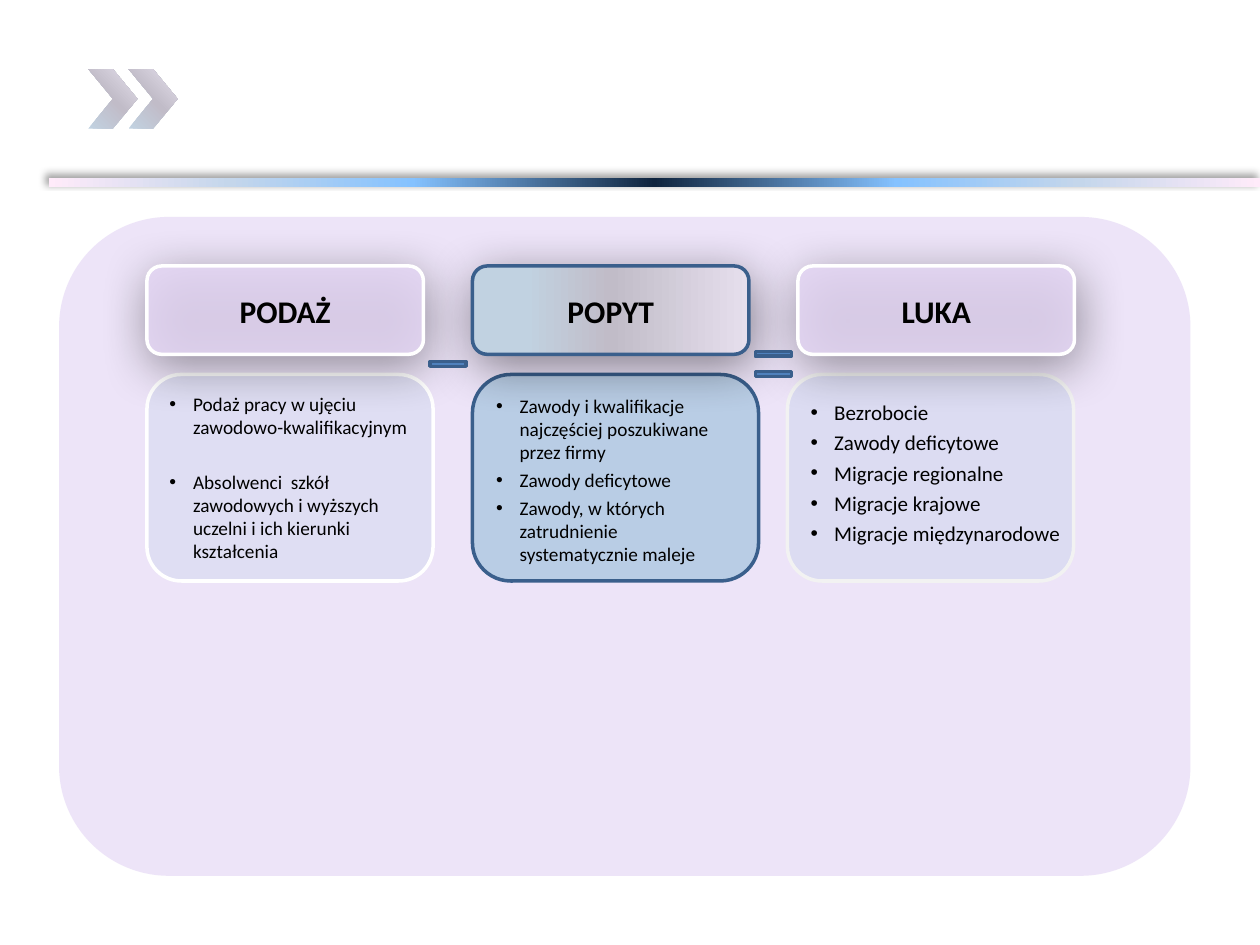
from lxml import etree
from pptx import Presentation
from pptx.dml.color import RGBColor
from pptx.enum import shapes, text
from pptx.oxml import ns
from pptx.util import Pt

COLORS = {
    "ink": "000000", "white": "FFFFFF", "pale": "F2F2F2",
    "lilac": "E5D7F5", "sky": "B9CDE5", "blue": "4F81BD", "edge": "3A5F8C",
    "navy": "0F243E", "azure": "85C2FF", "mist": "C4D6EB", "pink": "FFEBFA",
    "steel": "C1D2E1", "mauve": "C1BCC8", "haze": "E6DFED",
}
SHEEN = [(0, "steel"), (50, "mauve"), (100, "haze")]
BAR = [(0, "pink"), (15, "mist"), (30, "azure"), (50, "navy"),
       (70, "azure"), (85, "mist"), (100, "pink")]
GLOW = (43, 28, 6, 75)  # opacity %, blur, distance, direction
KIND = shapes.MSO_SHAPE


def child(parent, tag, **attributes):
    return etree.SubElement(parent, ns.qn(tag), {k: str(v) for k, v in attributes.items()})


class SlideBuilder:
    font = "Calibri"

    def __init__(self, slide):
        self.slide = slide

    def color(self, name):
        return RGBColor.from_string(COLORS[name])

    def shape(self, kind, box, fill, alpha=100, line=None, angle=0, shadow=None):
        """Draw a preset shape; fill is a colour name or a list of gradient stops."""
        item = self.slide.shapes.add_shape(kind, *map(Pt, box))
        item.shadow.inherit = False
        if isinstance(fill, list):
            self.gradient(item, fill, angle)
        else:
            item.fill.solid()
            item.fill.fore_color.rgb = self.color(fill)
            if alpha < 100:
                solid = item._element.spPr.find(ns.qn("a:solidFill"))
                child(solid[0], "a:alpha", val=alpha * 1000)
        if line:
            item.line.color.rgb = self.color(line)
            item.line.width = Pt(2)
        else:
            item.line.fill.background()
        if shadow:
            self.cast_shadow(item, *shadow)
        return item

    def gradient(self, item, stops, angle):
        item.fill.gradient()
        grad = item._element.spPr.find(ns.qn("a:gradFill"))
        for old in list(grad):
            grad.remove(old)
        stop_list = child(grad, "a:gsLst")
        for position, name in stops:
            stop = child(stop_list, "a:gs", pos=position * 1000)
            child(stop, "a:srgbClr", val=COLORS[name])
        child(grad, "a:lin", ang=angle * 60000, scaled=0)

    def cast_shadow(self, item, opacity, blur, distance, direction):
        effects = item._element.spPr.find(ns.qn("a:effectLst"))
        outer = child(effects, "a:outerShdw", blurRad=Pt(blur), dist=Pt(distance),
                      dir=direction * 60000, rotWithShape=0)
        child(child(outer, "a:srgbClr", val=COLORS["ink"]), "a:alpha", val=opacity * 1000)

    def style(self, paragraph, size, bold=False):
        paragraph.font.name = self.font
        paragraph.font.size = Pt(size)
        paragraph.font.bold = bold
        paragraph.font.color.rgb = self.color("ink")

    def bullets(self, frame, items, size, gap):
        frame.word_wrap = True
        for i, item in enumerate(items):
            paragraph = frame.paragraphs[0] if i == 0 else frame.add_paragraph()
            paragraph.text = item
            paragraph.alignment = text.PP_ALIGN.LEFT
            paragraph.space_before = Pt(gap if i else 0)
            props = paragraph._p.get_or_add_pPr()
            props.set("marL", str(Pt(13.5)))
            props.set("indent", str(Pt(-13.5)))
            child(props, "a:buFont", typeface="Arial")
            child(props, "a:buChar", char="•")
            self.style(paragraph, size)

    def heading(self, box, words):
        frame = self.slide.shapes.add_textbox(*map(Pt, box)).text_frame
        frame.word_wrap = True
        frame.auto_size = text.MSO_AUTO_SIZE.SHAPE_TO_FIT_TEXT
        paragraph = frame.paragraphs[0]
        paragraph.text = words
        paragraph.alignment = text.PP_ALIGN.CENTER
        self.style(paragraph, 18, bold=True)

    def body_list(self, box, items, size, gap):
        body = self.slide.placeholders[1]
        body.left, body.top, body.width, body.height = map(Pt, box)
        self.slide.shapes._spTree.append(body._element)  # bring to front
        body.text_frame.auto_size = text.MSO_AUTO_SIZE.NONE
        self.bullets(body.text_frame, items, size, gap)


def main():
    prs = Presentation()
    prs.slide_width, prs.slide_height = Pt(720), Pt(540)
    slide = prs.slides.add_slide(prs.slide_layouts[1])
    title = slide.shapes.title._element
    title.getparent().remove(title)
    build = SlideBuilder(slide)

    # Header band and chevrons
    build.shape(KIND.RECTANGLE, (28, 101.5, 692, 5.5), BAR, shadow=(40, 4, 3, 225))
    for left in (73.5, 50.5):
        build.shape(KIND.CHEVRON, (left, 39.5, 28, 34), SHEEN, angle=315)

    # Backdrop
    build.shape(KIND.ROUNDED_RECTANGLE, (33.75, 124, 646.5, 376.5), "lilac", alpha=66)

    # Column grid
    head_width, gap = 158, 28
    supply_x, demand_x, gap_x = (84 + i * (head_width + gap) for i in range(3))
    body_top, body_size = 214, (163.5, 118)

    # Column bodies
    supply = build.shape(KIND.ROUNDED_RECTANGLE, (supply_x, body_top, *body_size),
                         "sky", alpha=26, line="white")
    build.bullets(supply.text_frame, [
        "Podaż pracy w ujęciu zawodowo-kwalifikacyjnym",
        "Absolwenci  szkół zawodowych i wyższych uczelni i ich kierunki kształcenia",
    ], 11, 18)
    demand = build.shape(KIND.ROUNDED_RECTANGLE, (demand_x, body_top, *body_size),
                         "sky", line="edge")
    demand.adjustments[0] = 0.185
    demand.text_frame.margin_top = Pt(6)
    build.bullets(demand.text_frame, [
        "Zawody i kwalifikacje najczęściej poszukiwane przez firmy",
        "Zawody deficytowe",
        "Zawody, w których zatrudnienie systematycznie maleje",
    ], 11, 2.75)
    build.shape(KIND.ROUNDED_RECTANGLE, (gap_x - 6, body_top, *body_size),
                "sky", alpha=31, line="pale")

    # Column heads
    demand_sheen = [(19, "steel")] + SHEEN[1:]
    for left, fill, alpha, line in ((supply_x, "lilac", 84, "white"),
                                    (demand_x, demand_sheen, 100, "edge"),
                                    (gap_x, "lilac", 83, "white")):
        build.shape(KIND.ROUNDED_RECTANGLE, (left, 152, head_width, 50.5), fill,
                    alpha=alpha, line=line, shadow=GLOW)

    # Gap list
    build.body_list((gap_x, 224.5, 163.5, 94.5), [
        "Bezrobocie", "Zawody deficytowe", "Migracje regionalne",
        "Migracje krajowe", "Migracje międzynarodowe",
    ], 12, 3)

    # Head captions
    for left, inset, words in ((supply_x, 0, "PODAŻ"), (demand_x, 6, "POPYT"),
                               (gap_x, 6, "LUKA")):
        build.heading((left + inset, 163.5, head_width - 2 * inset, 29), words)

    # Minus sign, then two bars forming the equals sign
    for column, top in ((supply_x, 202.25), (demand_x, 196.5), (demand_x, 208)):
        build.shape(KIND.MATH_MINUS, (column + head_width, top, gap, 11.5),
                    "blue", line="edge")

    prs.save("out.pptx")


if __name__ == "__main__":
    main()
